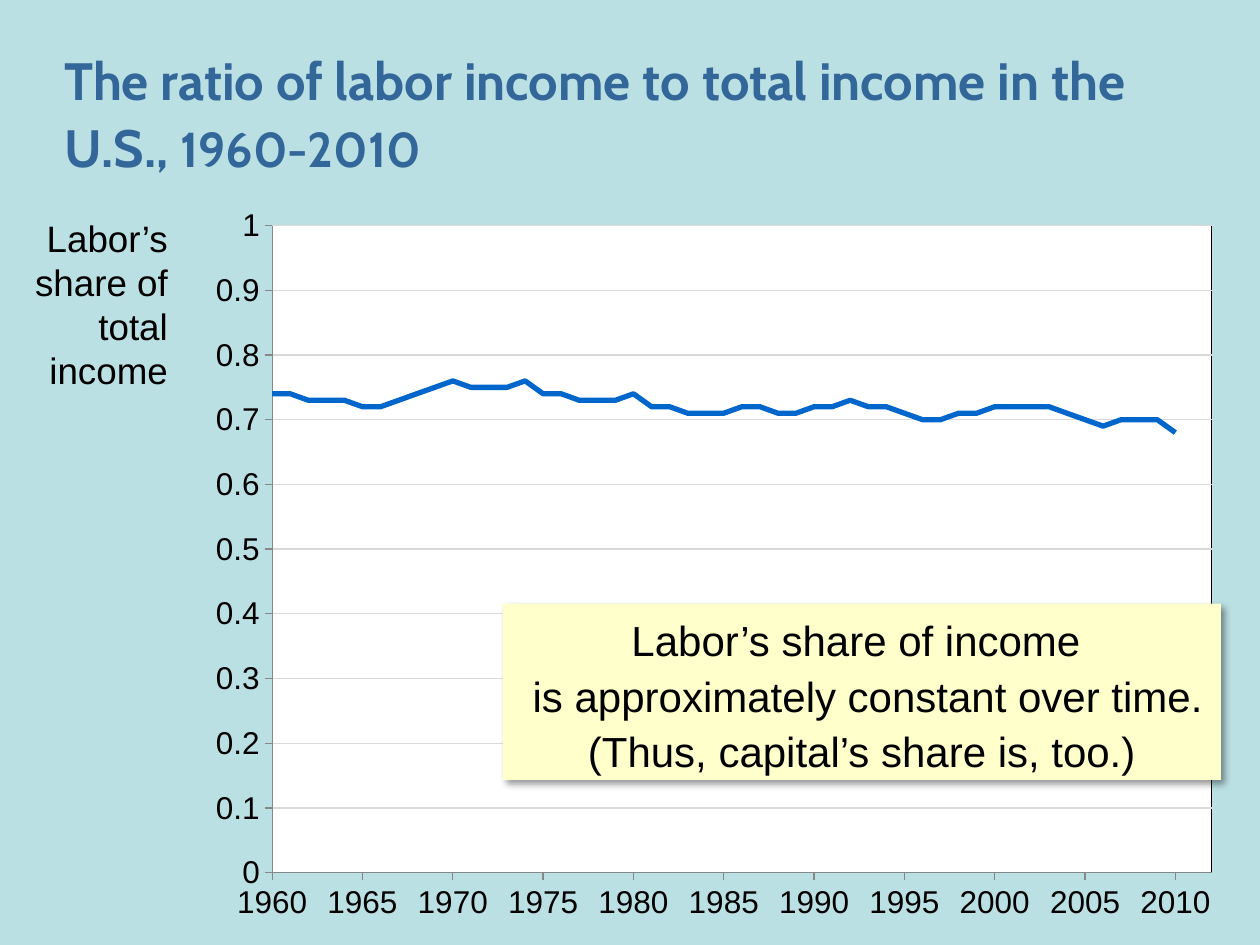
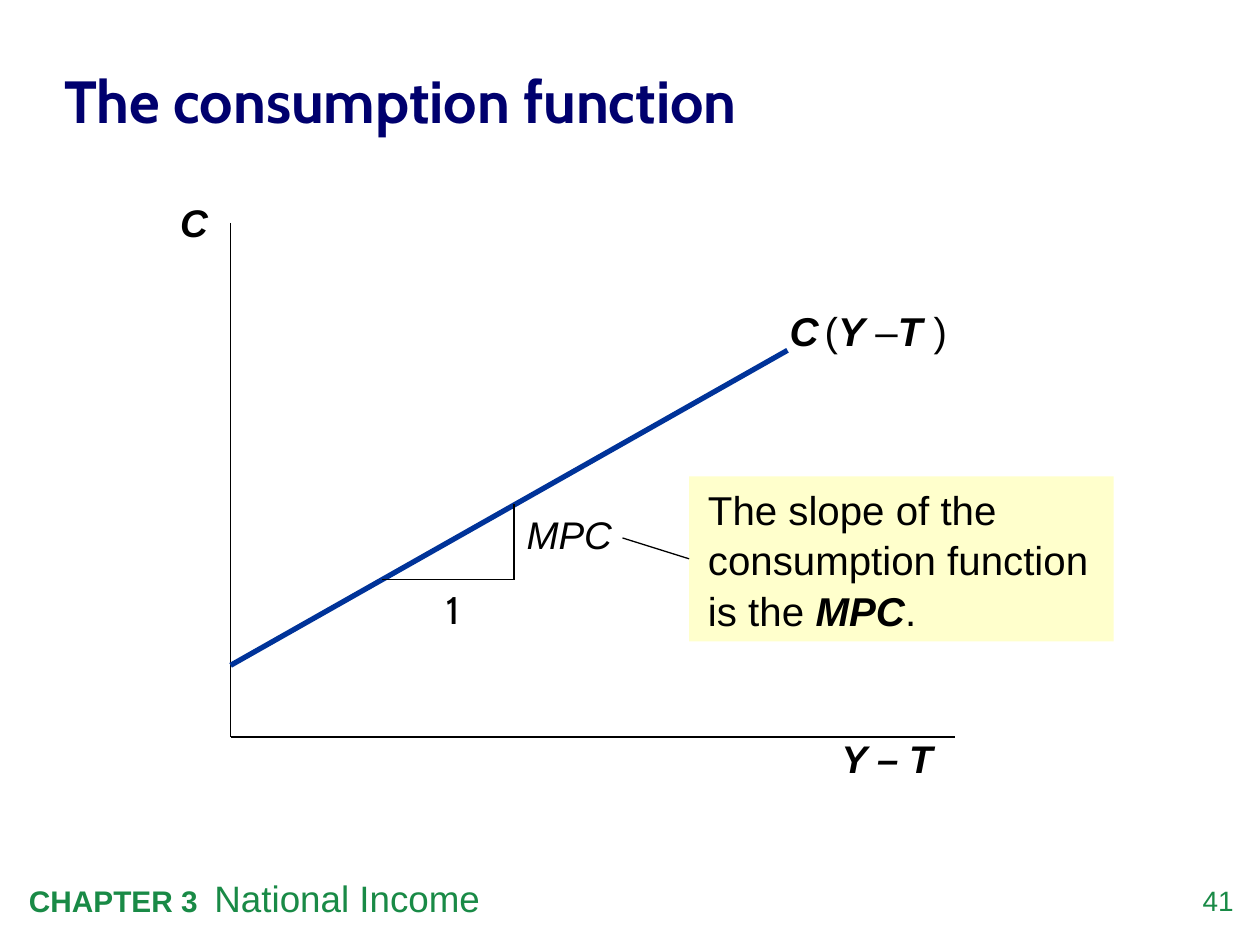
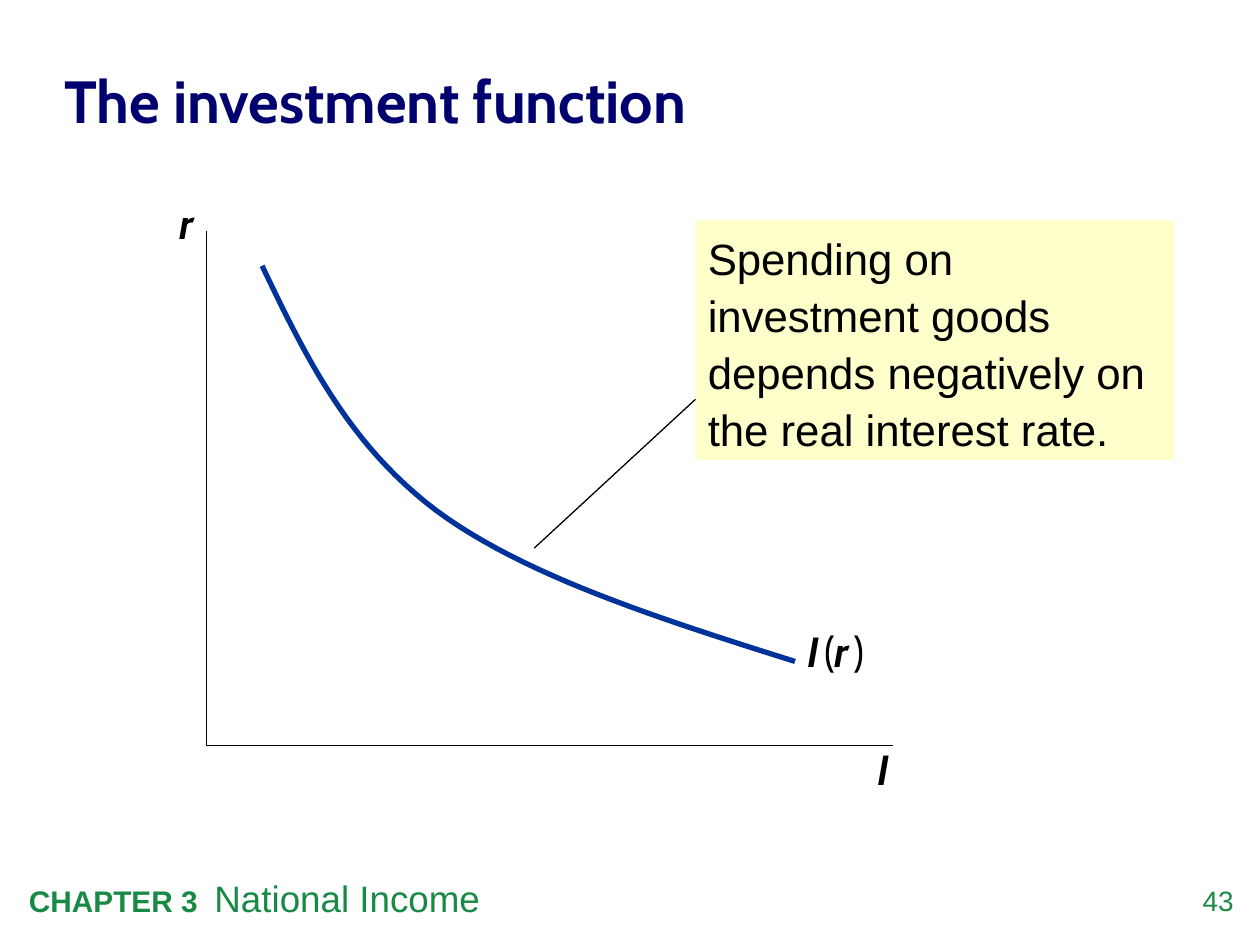
"""Build three slides on labor's share, consumption and investment."""
from pptx import Presentation
from pptx.chart.data import XyChartData
from pptx.dml.color import RGBColor
from pptx.enum.chart import XL_CHART_TYPE, XL_TICK_MARK
from pptx.enum.shapes import MSO_CONNECTOR, MSO_SHAPE
from pptx.enum.text import MSO_ANCHOR, PP_ALIGN
from pptx.oxml import parse_xml
from pptx.oxml.ns import nsdecls, qn
from pptx.util import Pt

SCATTER = XL_CHART_TYPE.XY_SCATTER_LINES_NO_MARKERS
OUT, NO_TICK = XL_TICK_MARK.OUTSIDE, XL_TICK_MARK.NONE
LEFT, MID, RIGHT = PP_ALIGN.LEFT, PP_ALIGN.CENTER, PP_ALIGN.RIGHT
TOP, CENTER = MSO_ANCHOR.TOP, MSO_ANCHOR.MIDDLE
RECT, STRAIGHT = MSO_SHAPE.RECTANGLE, MSO_CONNECTOR.STRAIGHT

BLACK = RGBColor(0x00, 0x00, 0x00)
WHITE = RGBColor(0xFF, 0xFF, 0xFF)
SKY = RGBColor(0xBB, 0xE0, 0xE3)
STEEL = RGBColor(0x33, 0x66, 0x99)
NAVY = RGBColor(0x00, 0x00, 0x6E)
GREEN = RGBColor(0x19, 0x8A, 0x46)
CREAM = RGBColor(0xFF, 0xFF, 0xCC)
BLUE = RGBColor(0x00, 0x33, 0x99)
AZURE = RGBColor(0x00, 0x66, 0xCC)
GRAY = RGBColor(0x87, 0x87, 0x87)
PALE = RGBColor(0xD9, 0xD9, 0xD9)
SANS, HEAD = "Arial", "Cabin"


def put(shape, parts, font=SANS, color=BLACK, align=LEFT, pad=(7.2, 3.6), space=1.0, fill=None):
    """Write (text, size, style) parts into a shape; style holds b and i."""
    frame = shape.text_frame
    frame.word_wrap = True
    frame.margin_left = frame.margin_right = Pt(pad[0])
    frame.margin_top = frame.margin_bottom = Pt(pad[1])
    if fill:
        shape.shadow.inherit = False
        shape.fill.solid()
        shape.fill.fore_color.rgb = fill
        shape.line.fill.background()
        frame.vertical_anchor = TOP
    para = frame.paragraphs[0]
    para.alignment, para.line_spacing = align, space
    for text, size, style in parts:
        for row, words in enumerate(text.split("\n")):
            if row:
                para.add_line_break()
            run = para.add_run()
            run.text = words
            run.font.name, run.font.size = font, Pt(size)
            run.font.bold, run.font.italic = "b" in style, "i" in style
            run.font.color.rgb = color
    return shape


def draw(slide, ends, color=BLACK, width=0.75):
    """Draw a straight line through two points."""
    line = slide.shapes.add_connector(STRAIGHT, *map(Pt, ends))
    line.line.color.rgb, line.line.width = color, Pt(width)
    line._element.spPr.append(parse_xml(f"<a:effectLst {nsdecls('a')}/>"))
    return line


deck = Presentation()
deck.slide_width, deck.slide_height = Pt(720), Pt(540)

heads = [
    ([("The ratio of labor income to total income in the U.S., ", 30, "b"),
      ("1960-2010", 28, "b")], STEEL, SKY, 17.3, 92.9, None),
    ([("The consumption function", 34, "b")], NAVY, WHITE, 18.7, 74.2, "41"),
    ([("The investment function", 34, "b")], NAVY, WHITE, 18.7, 74.2, "43"),
]
for parts, color, back, top, high, page in heads:
    slide = deck.slides.add_slide(deck.slide_layouts[5])
    slide.background.fill.solid()
    slide.background.fill.fore_color.rgb = back
    title = slide.shapes.title
    title.left, title.top, title.width, title.height = map(Pt, (36.7, top, 649.4, high))
    title.text_frame.vertical_anchor = CENTER
    put(title, parts, HEAD, color, pad=(0, 0), space=1.05)
    if page:
        box = slide.shapes.add_textbox(Pt(665.3), Pt(504.7), Pt(39.6), Pt(23))
        put(box, [(page, 16, "")], color=GREEN, align=RIGHT, pad=(0, 0))
        box = slide.shapes.add_textbox(Pt(9.4), Pt(496.8), Pt(589), Pt(32.4))
        put(box, [("CHAPTER 3  ", 17, "b"), ("National Income", 21, "")], color=GREEN)
share, spend, invest = deck.slides

ratios = [
    0.74, 0.74, 0.73, 0.73, 0.73, 0.72, 0.72, 0.73, 0.74, 0.75, 0.76, 0.75, 0.75,
    0.75, 0.76, 0.74, 0.74, 0.73, 0.73, 0.73, 0.74, 0.72, 0.72, 0.71, 0.71, 0.71,
    0.72, 0.72, 0.71, 0.71, 0.72, 0.72, 0.73, 0.72, 0.72, 0.71, 0.7, 0.7, 0.71,
    0.71, 0.72, 0.72, 0.72, 0.72, 0.71, 0.7, 0.69, 0.7, 0.7, 0.7, 0.68,
]
data = XyChartData()
points = data.add_series("Series 1")
for year, ratio in enumerate(ratios, 1960):
    points.add_data_point(year, ratio)
frame = share.shapes.add_chart(SCATTER, Pt(105.8), Pt(118.8), Pt(614.2), Pt(421.2), data)
chart = frame.chart
chart.has_title = chart.has_legend = False
chart.font.name, chart.font.size, chart.font.color.rgb = SANS, Pt(18), BLACK
plot = chart.plots[0]
plot.vary_by_categories = False
curve = plot.series[0]
curve.smooth = False
curve.format.line.color.rgb, curve.format.line.width = AZURE, Pt(3)
scales = [(chart.category_axis, 1960, 2012, 5), (chart.value_axis, 0, 1, 0.1)]
for axis, low, high, step in scales:
    axis.minimum_scale, axis.maximum_scale, axis.major_unit = low, high, step
    axis.major_tick_mark, axis.minor_tick_mark = OUT, NO_TICK
    axis.has_major_gridlines = axis is chart.value_axis
    axis.tick_labels.font.size = Pt(18)
    axis.tick_labels.number_format = "General"
    axis.tick_labels.number_format_is_linked = False
    axis.format.line.color.rgb, axis.format.line.width = GRAY, Pt(0.75)
grid = chart.value_axis.major_gridlines.format.line
grid.color.rgb, grid.width = PALE, Pt(0.75)

area = chart._chartSpace.chart.plotArea
for tag in ("c:layout", "c:spPr"):
    for old in area.findall(qn(tag)):
        area.remove(old)
spots = "".join(f'<c:{key} val="{val}"/>' for key, val in [
    ("layoutTarget", "inner"), ("xMode", "edge"), ("yMode", "edge"),
    ("x", 0.081), ("y", 0.024), ("w", 0.874), ("h", 0.878)])
area.insert(0, parse_xml(
    f"<c:layout {nsdecls('c')}><c:manualLayout>{spots}</c:manualLayout></c:layout>"))
area.append(parse_xml(
    f"<c:spPr {nsdecls('c', 'a')}>"
    f'<a:solidFill><a:srgbClr val="{WHITE}"/></a:solidFill>'
    f'<a:ln w="{Pt(0.75)}"><a:solidFill><a:srgbClr val="{BLACK}"/></a:solidFill></a:ln>'
    "</c:spPr>"))

box = share.shapes.add_textbox(Pt(9.4), Pt(119.5), Pt(93.6), Pt(113))
put(box, [("Labor’s share of total income", 21, "")], align=RIGHT)
note = share.shapes.add_shape(RECT, Pt(287.3), Pt(344.9), Pt(410.4), Pt(100.8))
put(note, [("Labor’s share of income \n is approximately constant over time.\n"
            "(Thus, capital’s share is, too.)", 24, "")], align=MID, space=1.1, fill=CREAM)
note._element.spPr.find(qn("a:effectLst")).append(parse_xml(
    f'<a:outerShdw {nsdecls("a")} blurRad="{Pt(4)}" dist="{Pt(3)}" dir="2700000" '
    f'algn="tl" rotWithShape="0"><a:srgbClr val="{BLACK}"><a:alpha val="40000"/>'
    "</a:srgbClr></a:outerShdw>"))

for slide, left, top, base, right in [
        (spend, 131.8, 127.4, 421.2, 545.8), (invest, 118.1, 131.8, 426.2, 510.5)]:
    draw(slide, (left, top, left, base))
    draw(slide, (left, base, right, base))

draw(spend, (131.8, 380.2, 450, 200.2), BLUE, 3)
draw(spend, (218.2, 331.2, 293.8, 331.2))
draw(spend, (293.8, 331.2, 293.8, 288))

bends = [
    [(149.8, 151.9), (174.2, 203), (198.7, 253.4), (249.1, 291.6)],
    [(249.1, 291.6), (299.5, 329), (376.6, 353.5), (454.3, 378)],
]
steps = 24
dots = []
for bend in bends:
    for step in range(1, steps + 1):
        t = step / steps
        mix = ((1 - t) ** 3, 3 * t * (1 - t) ** 2, 3 * t * t * (1 - t), t ** 3)
        dots.append(tuple(Pt(sum(m * p[k] for m, p in zip(mix, bend))) for k in (0, 1)))
path = invest.shapes.build_freeform(*map(Pt, bends[0][0]))
path.add_line_segments(dots, close=False)
curve = path.convert_to_shape()
curve.shadow.inherit = False
curve.fill.background()
curve.line.color.rgb, curve.line.width = BLUE, Pt(3)

labels = [
    (spend, (95.8, 110.2, 36, 33.8), SANS, LEFT, [("C", 22, "bi")]),
    (spend, (473.8, 416.2, 84.2, 33.8), SANS, LEFT, [("Y – T", 22, "bi")]),
    (spend, (444.2, 171.4, 108, 34.6), SANS, LEFT, [
        ("C", 23, "bi"), (" ", 12, "bi"), ("(", 23, ""), ("Y ", 23, "bi"),
        ("–", 23, ""), ("T ", 23, "bi"), (")", 23, "")]),
    (spend, (247.7, 331.2, 28.8, 33.8), HEAD, LEFT, [("1", 22, "")]),
    (spend, (293.8, 288.7, 84.2, 33.8), SANS, LEFT, [("MPC", 22, "i")]),
    (invest, (90, 109.4, 33.8, 36), HEAD, MID, [("r", 24, "bi")]),
    (invest, (488.2, 421.2, 33.8, 36), HEAD, MID, [("I", 24, "bi")]),
    (invest, (454.3, 354.2, 61.9, 36), HEAD, LEFT, [
        ("I", 24, "bi"), (" ", 12, "bi"), ("(", 24, ""), ("r", 24, "bi"),
        (" ", 12, "bi"), (")", 24, "")]),
]
for slide, spot, font, align, parts in labels:
    put(slide.shapes.add_textbox(*map(Pt, spot)), parts, font, align=align)

note = spend.shapes.add_shape(RECT, Pt(393.8), Pt(272.2), Pt(242.6), Pt(94.3))
put(note, [("The slope of the consumption function is the ", 23, ""),
           ("MPC", 23, "bi"), (".", 23, "")], pad=(10.8, 3.6), space=1.05, fill=CREAM)
draw(spend, (393.8, 319.35, 355.7, 307.4)).begin_connect(note, 1)

note = invest.shapes.add_shape(RECT, Pt(397.4), Pt(126), Pt(273.6), Pt(136.8))
put(note, [("Spending on investment goods \n"
            "depends negatively on the real interest rate.", 25, "")], space=1.09, fill=CREAM)
draw(invest, (397.4, 228.2, 305.3, 313.2))

deck.save("out.pptx")
